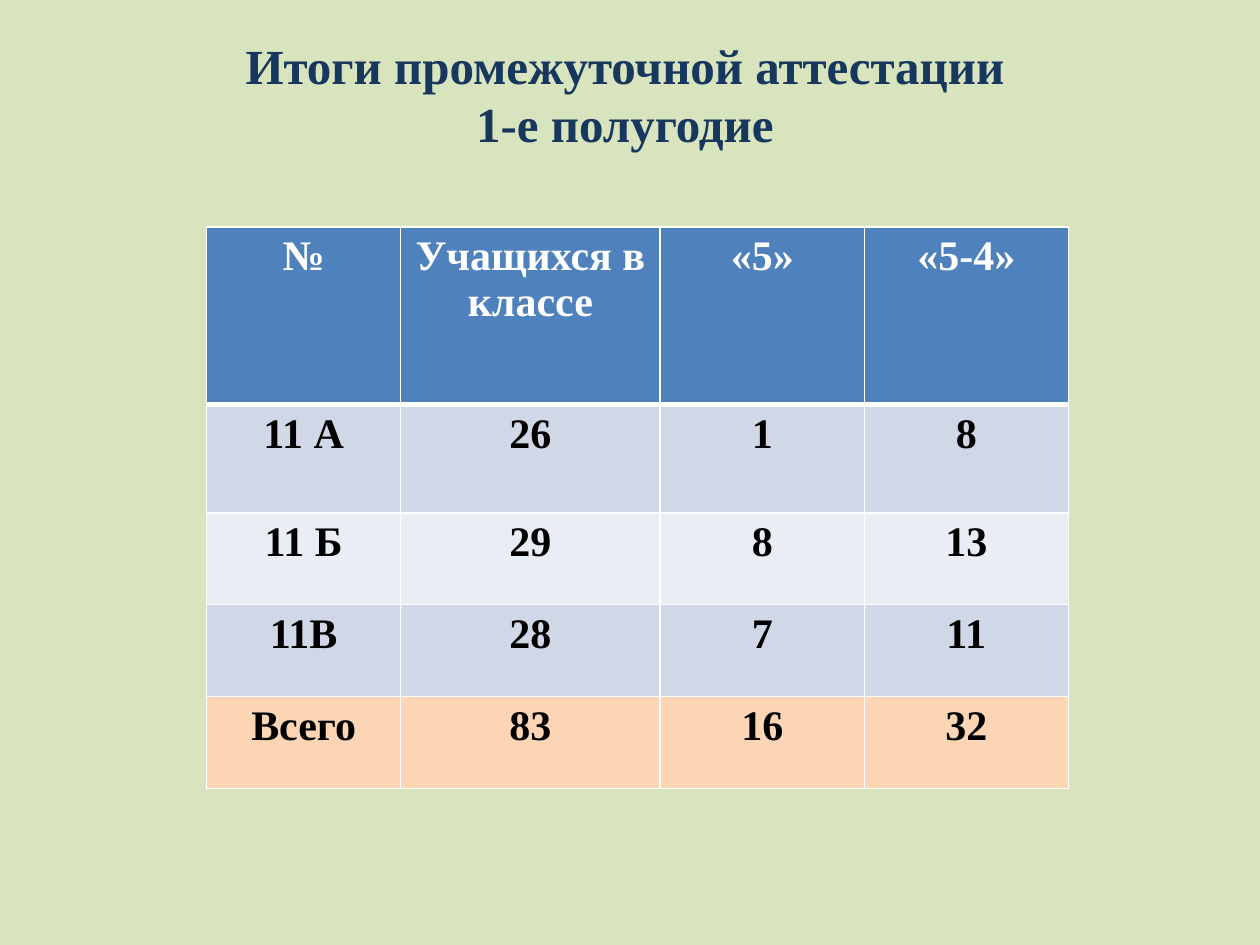
from dataclasses import dataclass

from lxml import etree
from pptx import Presentation
from pptx.dml.color import RGBColor
from pptx.enum.text import MSO_ANCHOR, PP_ALIGN
from pptx.oxml.ns import qn
from pptx.util import Inches, Pt

CENTER = PP_ALIGN.CENTER
TOP = MSO_ANCHOR.TOP


@dataclass(frozen=True)
class Theme:
    font: str = "Times New Roman"
    title_size: int = 28
    cell_size: int = 24
    background: str = "D7E4BD"
    title: str = "17375E"
    header: str = "4F81BD"
    header_text: str = "FFFFFF"
    bands: tuple = ("D0D8E8", "E9EDF4")
    total: str = "FCD5B5"
    body_text: str = "000000"
    border: str = "FFFFFF"
    border_width: int = 1
    header_rule: int = 3


THEME = Theme()
TITLE_LINES = ["Итоги промежуточной аттестации", "1-е полугодие"]
RESULTS = [
    ["№", "Учащихся в классе", "«5»", "«5-4»"],
    ["11 А", "26", "1", "8"],
    ["11 Б", "29", "8", "13"],
    ["11В", "28", "7", "11"],
    ["Всего", "83", "16", "32"],
]
COLUMN_WIDTHS = [1.54, 2.06, 1.62, 1.62]
ROW_HEIGHTS = [1.41, 0.86, 0.73, 0.73, 0.73]


def write(paragraph, text, size, color):
    paragraph.alignment = CENTER
    run = paragraph.add_run()
    run.text = text
    run.font.name = THEME.font
    run.font.size = Pt(size)
    run.font.bold = True
    run.font.color.rgb = RGBColor.from_string(color)


def add_title(slide, box):
    frame = slide.shapes.add_textbox(*map(Inches, box)).text_frame
    frame.word_wrap = True
    frame.vertical_anchor = TOP
    for index, line in enumerate(TITLE_LINES):
        paragraph = frame.add_paragraph() if index else frame.paragraphs[0]
        write(paragraph, line, THEME.title_size, THEME.title)


def set_borders(cell, top, bottom):
    properties = cell._tc.get_or_add_tcPr()
    side = THEME.border_width
    widths = {"lnL": side, "lnR": side, "lnT": top, "lnB": bottom}
    for edge, width in widths.items():
        line = etree.SubElement(properties, qn(f"a:{edge}"), w=str(Pt(width)))
        fill = etree.SubElement(line, qn("a:solidFill"))
        etree.SubElement(fill, qn("a:srgbClr"), val=THEME.border)


def row_fill(row, last):
    if row == 0:
        return THEME.header
    if row == last:
        return THEME.total
    return THEME.bands[(row - 1) % len(THEME.bands)]


def add_results(slide, box):
    frame = slide.shapes.add_table(
        len(RESULTS), len(RESULTS[0]), *map(Inches, box)
    )
    table = frame.table
    for column, width in zip(table.columns, COLUMN_WIDTHS):
        column.width = Inches(width)
    for row, height in zip(table.rows, ROW_HEIGHTS):
        row.height = Inches(height)
    for r, values in enumerate(RESULTS):
        top = THEME.header_rule if r == 1 else THEME.border_width
        bottom = THEME.header_rule if r == 0 else THEME.border_width
        color = THEME.body_text if r else THEME.header_text
        for c, value in enumerate(values):
            cell = table.cell(r, c)
            set_borders(cell, top, bottom)
            cell.fill.solid()
            cell.fill.fore_color.rgb = RGBColor.from_string(
                row_fill(r, len(RESULTS) - 1)
            )
            write(cell.text_frame.paragraphs[0], value, THEME.cell_size, color)


def main():
    deck = Presentation()
    deck.slide_width, deck.slide_height = Inches(10), Inches(7.5)
    slide = deck.slides.add_slide(deck.slide_layouts[6])
    slide.background.fill.solid()
    slide.background.fill.fore_color.rgb = RGBColor.from_string(THEME.background)
    add_title(slide, (0.31, 0.23, 9.3, 1.04))
    add_results(slide, (1.64, 1.8, sum(COLUMN_WIDTHS), sum(ROW_HEIGHTS)))
    deck.save("out.pptx")


if __name__ == "__main__":
    main()
